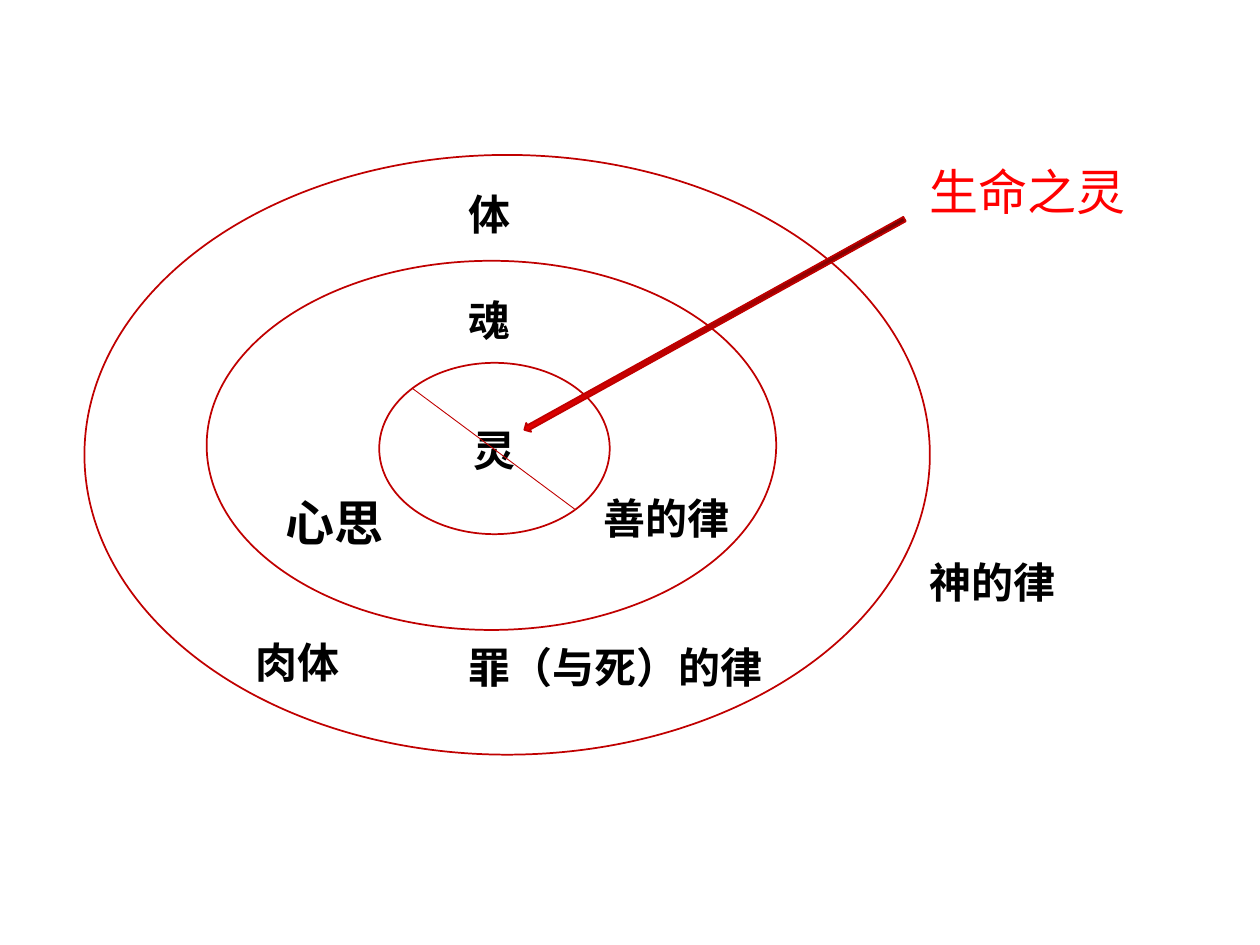
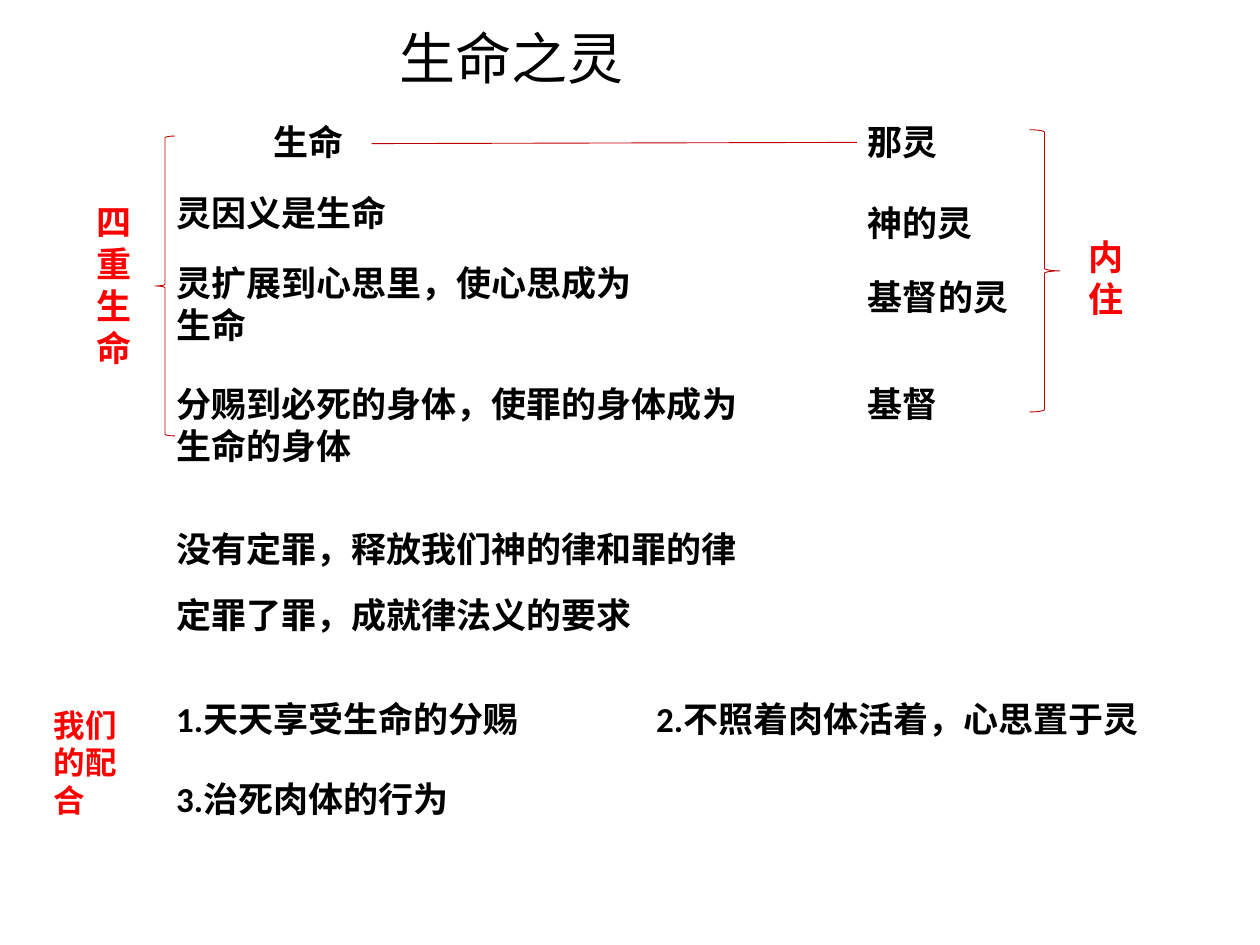
import pptx
import pptx.dml.color
import pptx.enum.lang
import pptx.enum.shapes
import pptx.enum.text
import pptx.oxml
import pptx.oxml.ns
import pptx.util

Inches = pptx.util.Inches
Preset = pptx.enum.shapes.MSO_SHAPE
Anchor = pptx.enum.text.MSO_ANCHOR
AutoSize = pptx.enum.text.MSO_AUTO_SIZE


def rgb(value):
    return pptx.dml.color.RGBColor.from_string(value)


THEME = {
    "ink": rgb("000000"),
    "accent": rgb("FF0000"),
    "outline": rgb("C00000"),
    "arrow": (rgb("E30000"), rgb("760303")),
    "ring_width": pptx.util.Pt(1),
    "hairline": pptx.util.Pt(0.5),
    "diagram_font": "Noto Sans CJK SC",
    "body_font": "Calibri",
    "title": 32,
    "callout": 28,
    "ring_label": 24,
    "body": 20,
    "note": 18,
}
DIAGRAM_FRAME = {
    "auto_size": AutoSize.NONE,
    "vertical_anchor": Anchor.MIDDLE,
    "margin_top": 0,
    "margin_bottom": 0,
}
BODY_FRAME = {
    "auto_size": AutoSize.SHAPE_TO_FIT_TEXT,
    "vertical_anchor": Anchor.TOP,
}


def add_label(slide, text, box, size, color="ink", bold=True,
              font="body_font", wrap=False):
    """Place one line of text; size, color and font are THEME keys."""
    label = slide.shapes.add_textbox(*map(Inches, box))
    frame = label.text_frame
    frame_format = DIAGRAM_FRAME if font == "diagram_font" else BODY_FRAME
    for name, value in {**frame_format, "word_wrap": wrap}.items():
        setattr(frame, name, value)
    run = frame.paragraphs[0].add_run()
    run.text = text
    run_format = {
        "name": THEME[font],
        "size": pptx.util.Pt(THEME[size]),
        "bold": bold,
        "language_id": pptx.enum.lang.MSO_LANGUAGE_ID.SIMPLIFIED_CHINESE,
    }
    for name, value in run_format.items():
        setattr(run.font, name, value)
    run.font.color.rgb = THEME[color]
    east_asian = pptx.oxml.parse_xml(
        f'<a:ea {pptx.oxml.ns.nsdecls("a")} typeface="{THEME[font]}"/>')
    run.font._element.find(pptx.oxml.ns.qn("a:latin")).addnext(east_asian)


deck = pptx.Presentation()
deck.slide_width = Inches(10)
deck.slide_height = Inches(7.5)
blank = deck.slide_layouts[6]
circles = deck.slides.add_slide(blank)
summary = deck.slides.add_slide(blank)

# Rings of the person, and braces around the two lists
for slide, preset, box, width in (
    (circles, Preset.OVAL, (0.67, 1.23, 6.71, 4.76), "ring_width"),
    (circles, Preset.OVAL, (1.64, 2.07, 4.52, 2.93), "ring_width"),
    (circles, Preset.OVAL, (3.01, 2.88, 1.83, 1.36), "ring_width"),
    (circles, Preset.UP_ARROW, (5.63, 0.85, 0.08, 3.45), "ring_width"),
    (summary, Preset.LEFT_BRACE, (1.23, 1.08, 0.16, 2.38), "hairline"),
    (summary, Preset.RIGHT_BRACE, (8.17, 1.03, 0.24, 2.24), "hairline"),
):
    outline = slide.shapes.add_shape(preset, *map(Inches, box))
    outline.shadow.inherit = False
    outline.line.color.rgb = THEME["outline"]
    outline.line.width = THEME[width]
    if preset == Preset.UP_ARROW:
        outline.rotation = 241
        outline.fill.gradient()
        outline.fill.gradient_angle = 270
        for stop, color in zip(outline.fill.gradient_stops, THEME["arrow"]):
            stop.color.rgb = color
    else:
        outline.fill.background()

# Slide 1: names of the rings and the laws
for text, box in (
    ("体", (3.62, 1.45, 0.53, 0.5)),
    ("罪（与死）的律", (3.62, 5.04, 2.54, 0.5)),
    ("魂", (3.62, 2.29, 0.67, 0.5)),
    ("善的律", (4.69, 3.86, 1.2, 0.5)),
    ("肉体", (1.93, 5, 0.96, 0.5)),
    ("灵", (3.66, 3.32, 0.53, 0.5)),
    ("神的律", (7.28, 4.37, 1.2, 0.5)),
):
    add_label(circles, text, box, "ring_label", font="diagram_font")
add_label(circles, "心思", (2.17, 3.86, 0.98, 0.57), "callout",
          font="diagram_font")
add_label(circles, "生命之灵", (7.28, 1.23, 1.76, 0.57), "callout", "accent",
          bold=False, font="diagram_font")

# Slide 2: title, the two lists and the practice points
add_label(summary, "生命之灵", (3.07, 0.13, 1.98, 0.64), "title", bold=False,
          font="diagram_font")
add_label(summary, "生命", (2.07, 0.91, 0.76, 0.44), "body")

SPIRIT_LEFT = 6.79
for text, top, width in (
    ("那灵", 0.91, 0.85),
    ("神的灵", 1.55, 1.04),
    ("基督的灵", 2.14, 1.32),
    ("基督", 2.99, 0.76),
):
    add_label(summary, text, (SPIRIT_LEFT, top, width, 0.44), "body")

LIFE_LEFT = 1.3
for text, left, top, width, height in (
    ("灵因义是生命", LIFE_LEFT, 1.47, 3.58, 0.44),
    ("灵扩展到心思里，使心思成为生命", LIFE_LEFT, 2.03, 3.95, 0.77),
    ("分赐到必死的身体，使罪的身体成为生命的身体", LIFE_LEFT, 2.99, 4.69, 0.77),
    ("没有定罪，释放我们神的律和罪的律", LIFE_LEFT, 4.14, 6.23, 0.44),
    ("定罪了罪，成就律法义的要求", LIFE_LEFT, 4.66, 4.2, 0.44),
    ("1.天天享受生命的分赐", LIFE_LEFT, 5.49, 2.93, 0.77),
    ("2.不照着肉体活着，心思置于灵", 5.11, 5.49, 4.04, 0.77),
    ("3.治死肉体的行为", LIFE_LEFT, 6.12, 2.37, 0.77),
):
    add_label(summary, text, (left, top, width, height), "body", wrap=True)

for text, box, size in (
    ("内住", (8.54, 1.82, 0.35, 0.77), "body"),
    ("四重生命", (0.67, 1.54, 0.42, 1.45), "body"),
    ("我们的配合", (0.33, 5.55, 0.76, 1.01), "note"),
):
    add_label(summary, text, box, size, "accent", wrap=True)

# Split of the inner ring, and the link from life to the Spirit
for slide, ends in (
    (circles, (3.27, 3.08, 4.56, 4.04)),
    (summary, (2.95, 1.14, 6.8, 1.13)),
):
    link = slide.shapes.add_connector(
        pptx.enum.shapes.MSO_CONNECTOR.STRAIGHT, *map(Inches, ends))
    link.line.color.rgb = THEME["outline"]
    link.line.width = THEME["hairline"]
    link._element.spPr.append(pptx.oxml.parse_xml(
        f'<a:effectLst {pptx.oxml.ns.nsdecls("a")}/>'))

deck.save("out.pptx")
